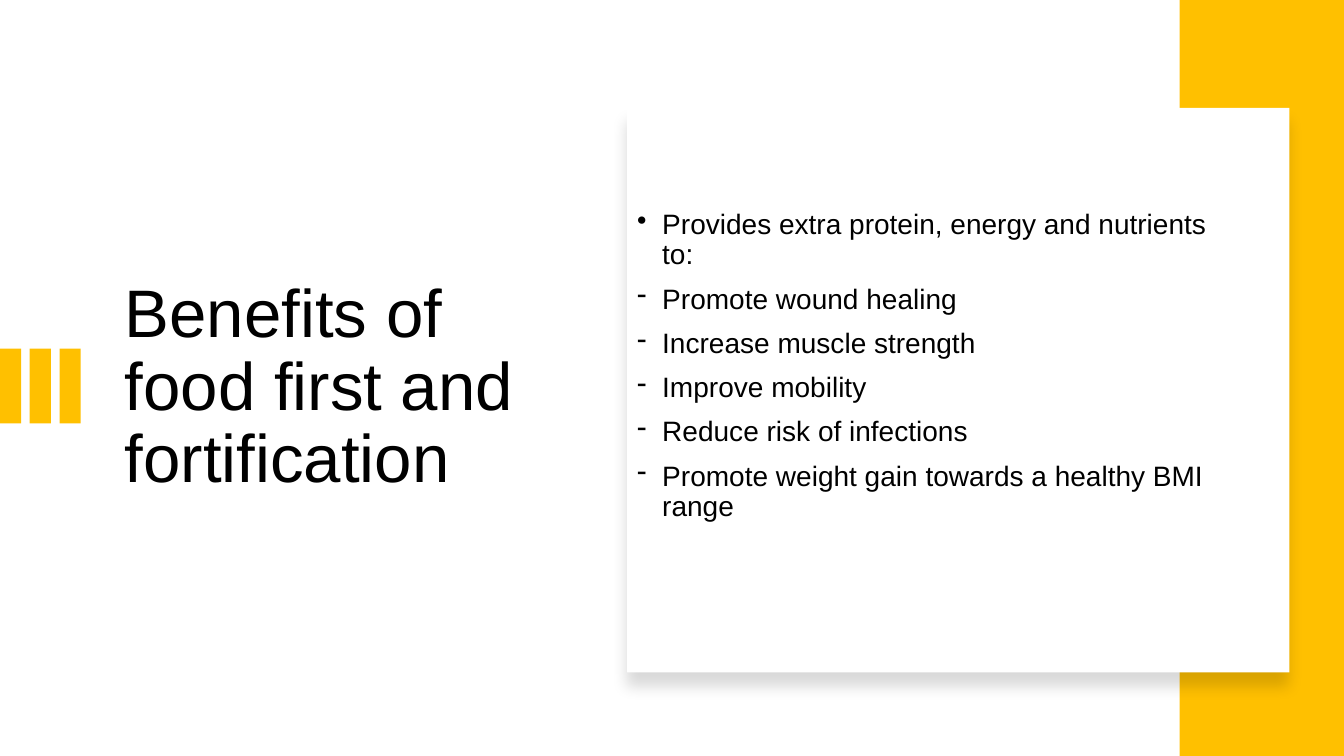
"""Build the slide on the benefits of food first and fortification."""
from lxml import etree
from pptx import Presentation
from pptx.dml.color import RGBColor
from pptx.enum.shapes import MSO_SHAPE
from pptx.enum.text import MSO_ANCHOR
from pptx.oxml.ns import qn
from pptx.util import Inches, Pt

GOLD = "FFC000"
BENEFITS = [
    ("•", "Provides extra protein, energy and nutrients to:"),
    ("-", "Promote wound healing"),
    ("-", "Increase muscle strength"),
    ("-", "Improve mobility"),
    ("-", "Reduce risk of infections"),
    ("-", "Promote weight gain towards a healthy BMI range"),
]


def add_block(left, top, width, height, color):
    block = slide.shapes.add_shape(
        MSO_SHAPE.RECTANGLE, Inches(left), Inches(top), Inches(width), Inches(height))
    block.shadow.inherit = False
    block.fill.solid()
    block.fill.fore_color.rgb = RGBColor.from_string(color)
    block.line.fill.background()
    return block


def style(paragraph, size):
    paragraph.line_spacing = 0.9
    paragraph.font.size = Pt(size)
    paragraph.font.name = "Arial"
    paragraph.font.color.rgb = RGBColor.from_string("000000")


prs = Presentation()
prs.slide_width = Inches(13.33)
prs.slide_height = Inches(7.5)
slide = prs.slides.add_slide(prs.slide_layouts[6])

title = slide.shapes.add_textbox(
    Inches(1.14), Inches(1.46), Inches(4.26), Inches(4.79)).text_frame
title.word_wrap = True
title.vertical_anchor = MSO_ANCHOR.MIDDLE
title.text = "Benefits of food first and fortification"
style(title.paragraphs[0], 48)

for bar in range(3):
    add_block(bar * 0.295, 3.46, 0.21, 0.74, GOLD)
add_block(11.7, 0, 1.63, 7.5, GOLD)

card = add_block(6.22, 1.07, 6.57, 5.6, "FFFFFF")
effects = card._element.spPr.find(qn("a:effectLst"))
card_shadow = etree.SubElement(
    effects, qn("a:outerShdw"), blurRad=str(Pt(11)), dist=str(Pt(10)),
    dir="5400000", algn="t", rotWithShape="0")
shadow_color = etree.SubElement(card_shadow, qn("a:srgbClr"), val="000000")
etree.SubElement(shadow_color, qn("a:alpha"), val="15000")

benefits = slide.shapes.add_textbox(
    Inches(6.22), Inches(1.46), Inches(6.2), Inches(4.79)).text_frame
benefits.word_wrap = True
benefits.vertical_anchor = MSO_ANCHOR.MIDDLE
benefits.margin_bottom = Inches(0.49)
benefits.text = "\n".join(text for _, text in BENEFITS)
for paragraph, (bullet, _) in zip(benefits.paragraphs, BENEFITS):
    style(paragraph, 20)
    paragraph.space_before = Pt(10)
    properties = paragraph._p.get_or_add_pPr()
    properties.set("marL", str(Inches(0.25)))
    properties.set("indent", str(Inches(-0.25)))
    bullet_mark = etree.Element(qn("a:buChar"), char=bullet)
    properties.find(qn("a:defRPr")).addprevious(bullet_mark)

prs.save("out.pptx")
